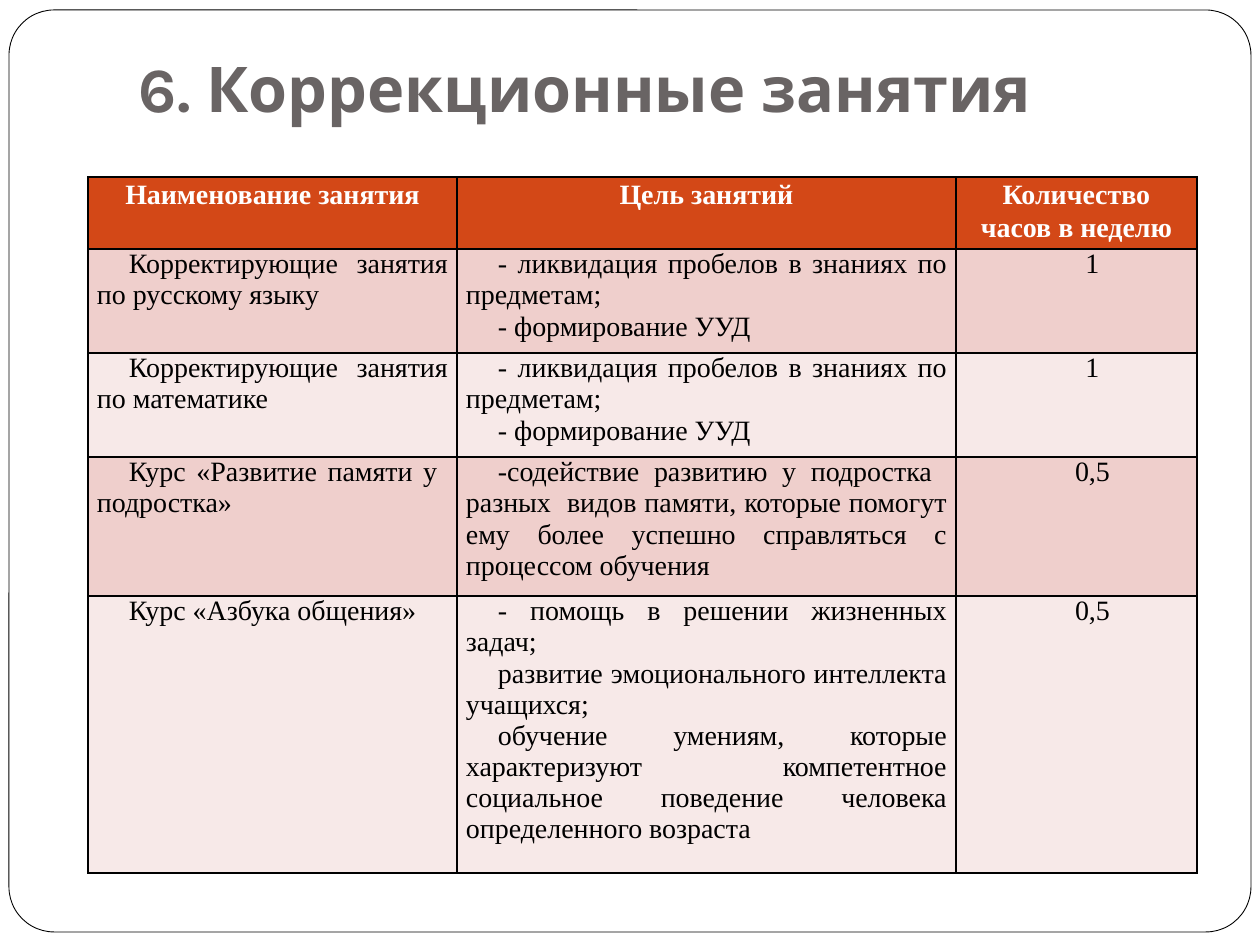
from pptx import Presentation
from pptx import util as u
from pptx.dml.color import RGBColor
from pptx.enum import shapes, text
from pptx.oxml import parse_xml
from pptx.oxml.ns import nsdecls

EMU_PER_PX = 914400 / 126
COLORS = {
    "paper": "FFFFFF", "ink": "000000", "title": "696464",
    "header": "D34817", "odd": "EFCFCC", "even": "F7E9E8",
}
CENTER, JUSTIFY = text.PP_ALIGN.CENTER, text.PP_ALIGN.JUSTIFY
HEADER_FORMAT = {"alignment": CENTER, "line_spacing": 1.07, "space_after": u.Pt(8)}

HEADINGS = ["Наименование занятия", "Цель занятий", "Количество часов в неделю"]
SUBJECT_GOALS = ["- ликвидация пробелов в знаниях по предметам;", "- формирование УУД"]
LESSONS = [
    (["Корректирующие занятия по русскому языку"], SUBJECT_GOALS, ["1"]),
    (["Корректирующие занятия по математике"], SUBJECT_GOALS, ["1"]),
    (["Курс «Развитие памяти у  подростка»"],
     ["-содействие развитию у подростка  разных  видов памяти, которые помогут "
      "ему более успешно справляться с процессом обучения"], ["0,5"]),
    (["Курс «Азбука общения»"],
     ["- помощь в решении жизненных задач;",
      "развитие эмоционального интеллекта учащихся;",
      "обучение умениям, которые характеризуют компетентное социальное "
      "поведение человека определенного возраста"], ["0,5"]),
]
COLUMN_WIDTHS = [369, 499, 241]
ROW_HEIGHTS = [68, 104, 104, 139, 277]


def px(length):
    return u.Emu(round(length * EMU_PER_PX))


def color(name):
    return RGBColor.from_string(COLORS[name])


def assign(target, values):
    for key, value in values.items():
        setattr(target, key, value)


class SlideBuilder:
    def __init__(self, slide):
        self.slide = slide
        self.title_font = {"name": "Karla", "size": u.Pt(36), "bold": True}
        self.table_font = {"name": "Times New Roman", "size": u.Pt(16)}
        self.cell_margins = {"margin_left": px(9), "margin_right": px(9),
                             "margin_top": 0, "margin_bottom": 0}

    def frame(self, left, top, width, height):
        border = self.slide.shapes.add_shape(
            shapes.MSO_SHAPE.ROUNDED_RECTANGLE, *map(px, (left, top, width, height)))
        border.adjustments[0] = 0.049
        border.shadow.inherit = False
        border.fill.solid()
        border.fill.fore_color.rgb = color("paper")
        border.line.color.rgb = color("ink")
        border.line.width = u.Pt(0.5)

    def add_text(self, paragraph, content, font, ink):
        run = paragraph.add_run()
        run.text = content
        assign(run.font, font)
        run.font.color.rgb = color(ink)

    def title(self, content, left, top, width, height):
        body = self.slide.shapes.add_textbox(
            *map(px, (left, top, width, height))).text_frame
        assign(body, {"word_wrap": True, "vertical_anchor": text.MSO_ANCHOR.BOTTOM,
                      "margin_left": px(13), "margin_right": px(13),
                      "margin_top": px(6), "margin_bottom": px(13)})
        self.add_text(body.paragraphs[0], content, self.title_font, "title")

    def outline(self, cell):
        """Put a 1 pt line on all four sides; call before the fill is set."""
        properties = cell._tc.get_or_add_tcPr()
        for side in ("lnL", "lnR", "lnT", "lnB"):
            properties.append(parse_xml(
                f'<a:{side} {nsdecls("a")} w="{u.Pt(1)}"><a:solidFill>'
                f'<a:srgbClr val="{COLORS["ink"]}"/></a:solidFill></a:{side}>'))

    def cell(self, cell, lines, fill, ink, bold, layout, indent=0):
        assign(cell, self.cell_margins)
        self.outline(cell)
        cell.fill.solid()
        cell.fill.fore_color.rgb = color(fill)
        body = cell.text_frame
        for number, line in enumerate(lines):
            paragraph = body.add_paragraph() if number else body.paragraphs[0]
            assign(paragraph, layout)
            if indent:
                properties = paragraph._p.get_or_add_pPr()
                properties.set("marL", "0")
                properties.set("indent", str(px(indent)))
            self.add_text(paragraph, line, {**self.table_font, "bold": bold}, ink)

    def table(self, left, top, headings, rows):
        grid = self.slide.shapes.add_table(
            len(rows) + 1, len(headings), px(left), px(top),
            px(sum(COLUMN_WIDTHS)), px(sum(ROW_HEIGHTS))).table
        for column, width in zip(grid.columns, COLUMN_WIDTHS):
            column.width = px(width)
        for row, height in zip(grid.rows, ROW_HEIGHTS):
            row.height = px(height)
        for c, heading in enumerate(headings):
            self.cell(grid.cell(0, c), [heading], "header", "paper", True, HEADER_FORMAT)
        for r, row in enumerate(rows, 1):
            for c, lines in enumerate(row):
                layout = {"alignment": CENTER if c == 2 else JUSTIFY}
                self.cell(grid.cell(r, c), lines, "odd" if r % 2 else "even",
                          "ink", False, layout, indent=32)


def main():
    deck = Presentation()
    deck.slide_width, deck.slide_height = px(1260), px(945)
    builder = SlideBuilder(deck.slides.add_slide(deck.slide_layouts[6]))
    builder.frame(9, 10, 1242, 922)
    builder.title("6. Коррекционные занятия", 126, 38, 1071, 100)
    builder.table(88, 177, HEADINGS, LESSONS)
    deck.save("out.pptx")


if __name__ == "__main__":
    main()
